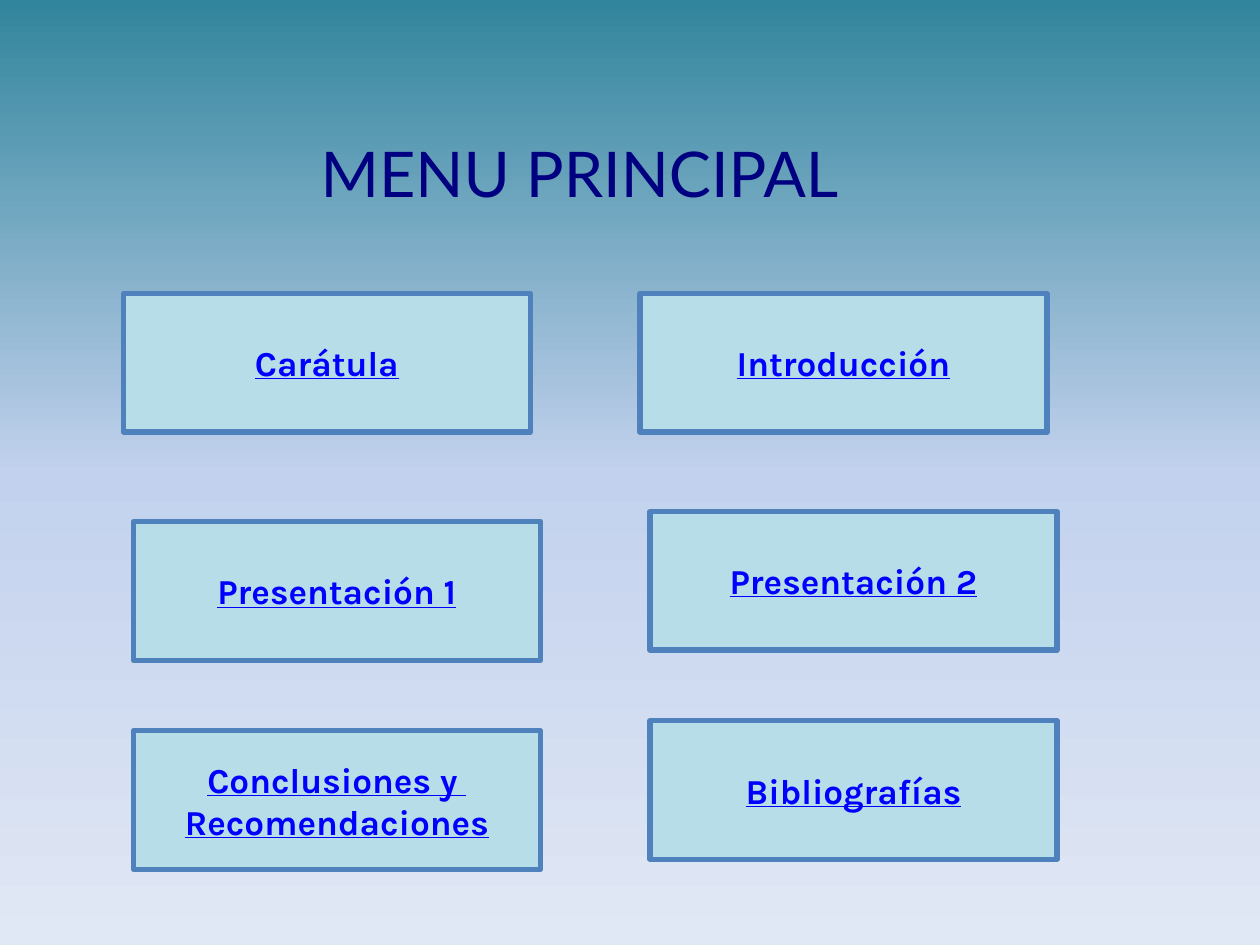
from copy import deepcopy
from dataclasses import dataclass

from pptx import Presentation
from pptx.dml.color import RGBColor
from pptx.enum.shapes import MSO_SHAPE
from pptx.enum.text import MSO_ANCHOR, PP_ALIGN
from pptx.oxml.ns import qn
from pptx.util import Inches, Pt

RECTANGLE = MSO_SHAPE.RECTANGLE
MIDDLE, TOP = MSO_ANCHOR.MIDDLE, MSO_ANCHOR.TOP
CENTER = PP_ALIGN.CENTER


@dataclass(frozen=True)
class Theme:
    sky: tuple = ("31859C", "C2D1ED", "E1E8F5")
    title_color: str = "000080"
    title_font: str = "Lato"
    title_size: int = 36
    button_fill: str = "B7DEE8"
    button_line: str = "4F81BD"
    button_line_width: int = 3
    button_text: str = "0000FF"
    button_font: str = "Karla"
    button_size: int = 20


THEME = Theme()

# Menu grid, in inches
COLUMN_LEFT, COLUMN_PITCH = 0.98, 4.1
ROW_TOPS = (2.33, 4.14, 5.8)
BUTTON_WIDTH, BUTTON_HEIGHT = 3.23, 1.1
STAGGER = 0.08  # lower rows move right; their second column also moves up

MENU = (
    ("Carátula", "Introducción"),
    ("Presentación 1", "Presentación 2"),
    ("Conclusiones y \nRecomendaciones", "Bibliografías"),
)


def paint_background(slide):
    fill = slide.background.fill
    fill.gradient()
    fill.gradient_angle = 270
    # A new gradient has two stops; add the third
    stop_list = next(slide.element.iter(qn("a:gsLst")))
    stop_list.append(deepcopy(stop_list[-1]))
    stops = fill.gradient_stops
    for index, (stop, color) in enumerate(zip(stops, THEME.sky)):
        stop.position = index / (len(THEME.sky) - 1)
        stop.color.rgb = RGBColor.from_string(color)


def write_text(shape, text, name, size, color, anchor, emphasis=False):
    frame = shape.text_frame
    frame.text = text
    frame.word_wrap = False
    frame.vertical_anchor = anchor
    for para in frame.paragraphs:
        para.alignment = CENTER
        font = para.font
        font.name, font.size = name, Pt(size)
        font.bold = font.underline = emphasis
        font.color.rgb = RGBColor.from_string(color)


def add_title(slide, text):
    box = slide.shapes.add_textbox(
        Inches(2.11), Inches(1.02), Inches(4.98), Inches(0.93))
    write_text(box, text, THEME.title_font, THEME.title_size,
               THEME.title_color, TOP)


def add_button(slide, row, column, text):
    shift = STAGGER if row else 0
    left = COLUMN_LEFT + column * COLUMN_PITCH + shift
    top = ROW_TOPS[row] - column * shift
    button = slide.shapes.add_shape(
        RECTANGLE, Inches(left), Inches(top),
        Inches(BUTTON_WIDTH), Inches(BUTTON_HEIGHT))
    button.shadow.inherit = False
    button.fill.solid()
    button.fill.fore_color.rgb = RGBColor.from_string(THEME.button_fill)
    button.line.color.rgb = RGBColor.from_string(THEME.button_line)
    button.line.width = Pt(THEME.button_line_width)
    write_text(button, text, THEME.button_font, THEME.button_size,
               THEME.button_text, MIDDLE, emphasis=True)


def main():
    deck = Presentation()
    deck.slide_width, deck.slide_height = Inches(10), Inches(7.5)
    slide = deck.slides.add_slide(deck.slide_layouts[6])

    paint_background(slide)
    add_title(slide, "MENU PRINCIPAL")

    # Menu buttons
    for row, labels in enumerate(MENU):
        for column, label in enumerate(labels):
            add_button(slide, row, column, label)

    deck.save("out.pptx")


if __name__ == "__main__":
    main()
